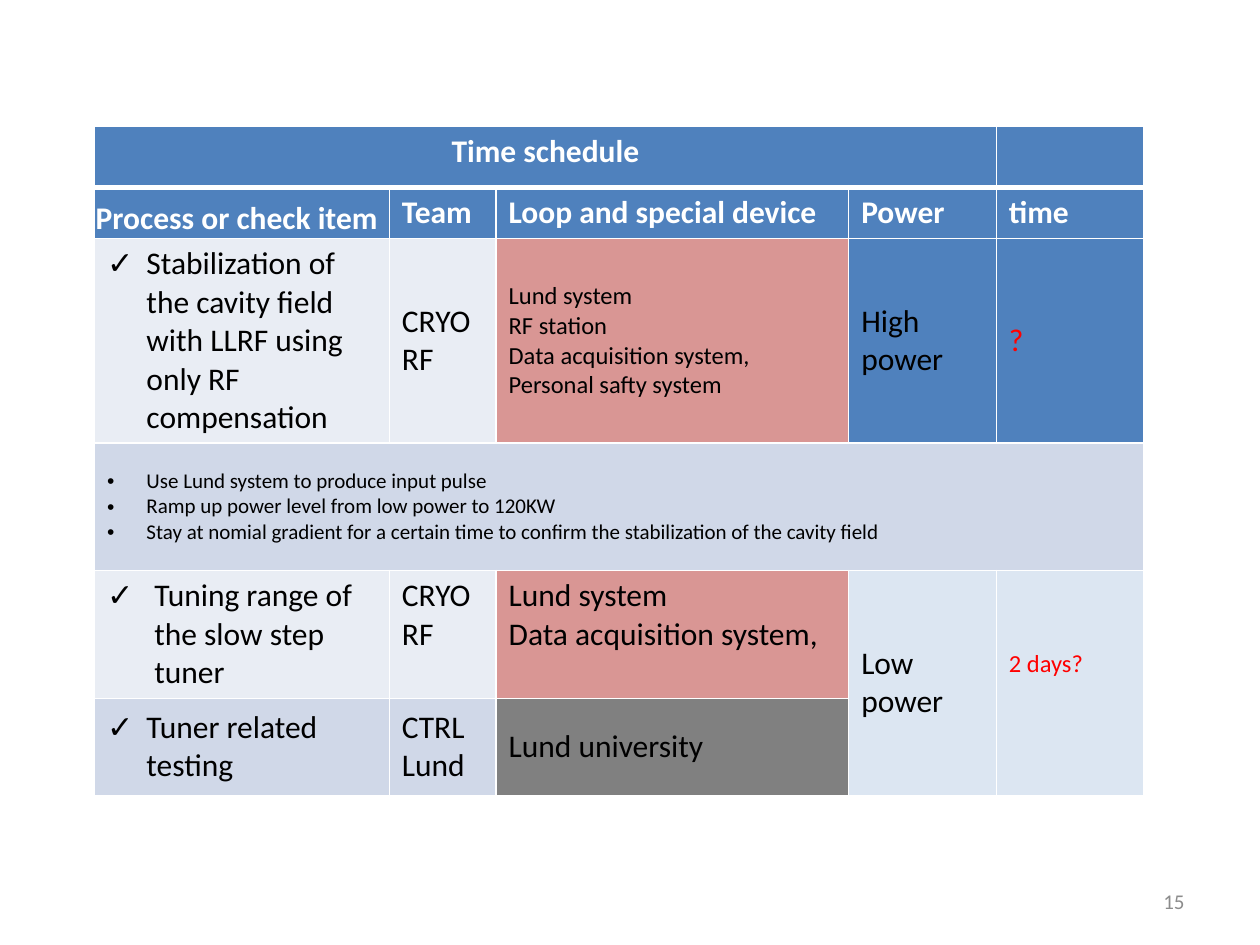
from pptx import Presentation
from pptx.util import Pt
from pptx.dml.color import RGBColor as Rgb
from pptx.enum.text import PP_ALIGN as Align, MSO_ANCHOR as Anchor
from lxml.etree import SubElement as Sub
from pptx.oxml import parse_xml
from pptx.oxml.ns import qn, nsdecls

BLUE, PALE, MIST, ICE = "4F81BD", "E9EDF4", "D0D8E8", "DCE6F2"
ROSE, GRAY, WHITE, BLACK, RED = "D99694", "808080", "FFFFFF", "000000", "FF0000"
TOP, MID, LOW = Anchor.TOP, Anchor.MIDDLE, Anchor.BOTTOM

COLS = [168.5, 61, 201.5, 84.4, 84.4]
ROWS = [35, 24.5, 107.3, 72.7, 69.8, 55.4]

HEAD = dict(color=WHITE, bold=True, anchor=TOP)
CHECK = dict(mark="✓", indent=22.5)

# (row, column, lines, fill, options)
CELLS = [
    (0, 0, ["Time schedule"], BLUE, dict(HEAD, span=(1, 4), align=Align.CENTER)),
    (0, 4, [], BLUE, {}),
    (1, 0, ["Process or check item"], BLUE,
     dict(HEAD, anchor=LOW, inset=(0.7, 0.7, 0.7, 0))),
    (1, 1, ["Team"], BLUE, HEAD),
    (1, 2, ["Loop and special device"], BLUE, HEAD),
    (1, 3, ["Power"], BLUE, HEAD),
    (1, 4, ["time"], BLUE, HEAD),
    (2, 0, ["Stabilization of the cavity field with LLRF using only RF compensation"],
     PALE, CHECK),
    (2, 1, ["CRYO", "RF"], PALE, {}),
    (2, 2, ["Lund system", "RF station", "Data acquisition system,",
            "Personal safty system"], ROSE, dict(size=14)),
    (2, 3, ["High", "power"], BLUE, {}),
    (2, 4, ["?"], BLUE, dict(color=RED)),
    (3, 0, ["Use Lund system to produce input pulse",
            "Ramp up power level from low power to 120KW",
            "Stay at nomial gradient for a certain time to confirm "
            "the stabilization of the cavity field"],
     MIST, dict(size=12, mark="•", indent=22.5, span=(1, 5))),
    (4, 0, ["Tuning range of the slow step tuner"], PALE, dict(CHECK, indent=27)),
    (4, 1, ["CRYO", "RF"], PALE, dict(anchor=TOP)),
    (4, 2, ["Lund system", "Data acquisition system,"], ROSE, dict(anchor=TOP)),
    (4, 3, ["Low", "power"], ICE, dict(span=(2, 1))),
    (4, 4, ["2 days?"], ICE,
     dict(size=14, color=RED, span=(2, 1), inset=(7.2, 3.6, 7.2, 25.6))),
    (5, 0, ["Tuner related testing"], MIST, CHECK),
    (5, 1, ["CTRL", "Lund"], MIST, {}),
    (5, 2, ["Lund university"], GRAY, {}),
]


def rgb(code):
    return Rgb.from_string(code)


def write(para, text, size, color, bold=False):
    run = para.add_run()
    run.text = text
    font = run.font
    font.name, font.size, font.bold = "Calibri", Pt(size), bold
    font.color.rgb = rgb(color)


def bullet(para, mark, indent):
    props = para._p.get_or_add_pPr()
    props.set("marL", str(Pt(indent)))
    props.set("indent", str(-Pt(indent)))
    Sub(props, qn("a:buFont")).set("typeface", "Arial")
    Sub(props, qn("a:buChar")).set("char", mark)


def border(cell, row):
    # Thick rule under the title row, thin ones elsewhere
    wide = {"L": 1, "R": 1, "T": 3 if row == 1 else 1, "B": 3 if row == 0 else 1}
    props = cell._tc.get_or_add_tcPr()
    for spot, (side, width) in enumerate(wide.items()):
        props.insert(spot, parse_xml(
            f'<a:ln{side} {nsdecls("a")} w="{Pt(width)}"><a:solidFill>'
            f'<a:srgbClr val="{WHITE}"/></a:solidFill></a:ln{side}>'))


def fill_cell(cell, lines, size=18, color=BLACK, bold=False, anchor=MID,
              align=None, mark=None, indent=0, inset=(7.2, 3.6, 7.2, 3.6)):
    cell.vertical_anchor = anchor
    (cell.margin_left, cell.margin_top,
     cell.margin_right, cell.margin_bottom) = map(Pt, inset)
    frame = cell.text_frame
    for i, line in enumerate(lines):
        para = frame.add_paragraph() if i else frame.paragraphs[0]
        para.alignment = align
        if mark:
            bullet(para, mark, indent)
        write(para, line, size, color, bold)


def main():
    deck = Presentation()
    deck.slide_width, deck.slide_height = Pt(720), Pt(540)
    slide = deck.slides.add_slide(deck.slide_layouts[6])

    # Schedule table
    table = slide.shapes.add_table(len(ROWS), len(COLS), Pt(54), Pt(72),
                                   Pt(sum(COLS)), Pt(sum(ROWS))).table
    table.first_row = table.horz_banding = False
    for col, width in zip(table.columns, COLS):
        col.width = Pt(width)
    for row, height in zip(table.rows, ROWS):
        row.height = Pt(height)

    for row, col, lines, fill, opts in CELLS:
        opts = dict(opts)
        down, across = opts.pop("span", (1, 1))
        cell = table.cell(row, col)
        if down * across > 1:
            cell.merge(table.cell(row + down - 1, col + across - 1))
        for r in range(row, row + down):
            for c in range(col, col + across):
                part = table.cell(r, c)
                part.fill.solid()
                part.fill.fore_color.rgb = rgb(fill)
                border(part, r)
        fill_cell(cell, lines, **opts)

    # Page number
    frame = slide.shapes.add_textbox(Pt(516), Pt(500.5), Pt(168), Pt(28.8)).text_frame
    frame.word_wrap = True
    frame.vertical_anchor = MID
    para = frame.paragraphs[0]
    para.alignment = Align.RIGHT
    write(para, "15", 12, "8C8C8C")

    deck.save("out.pptx")


if __name__ == "__main__":
    main()
